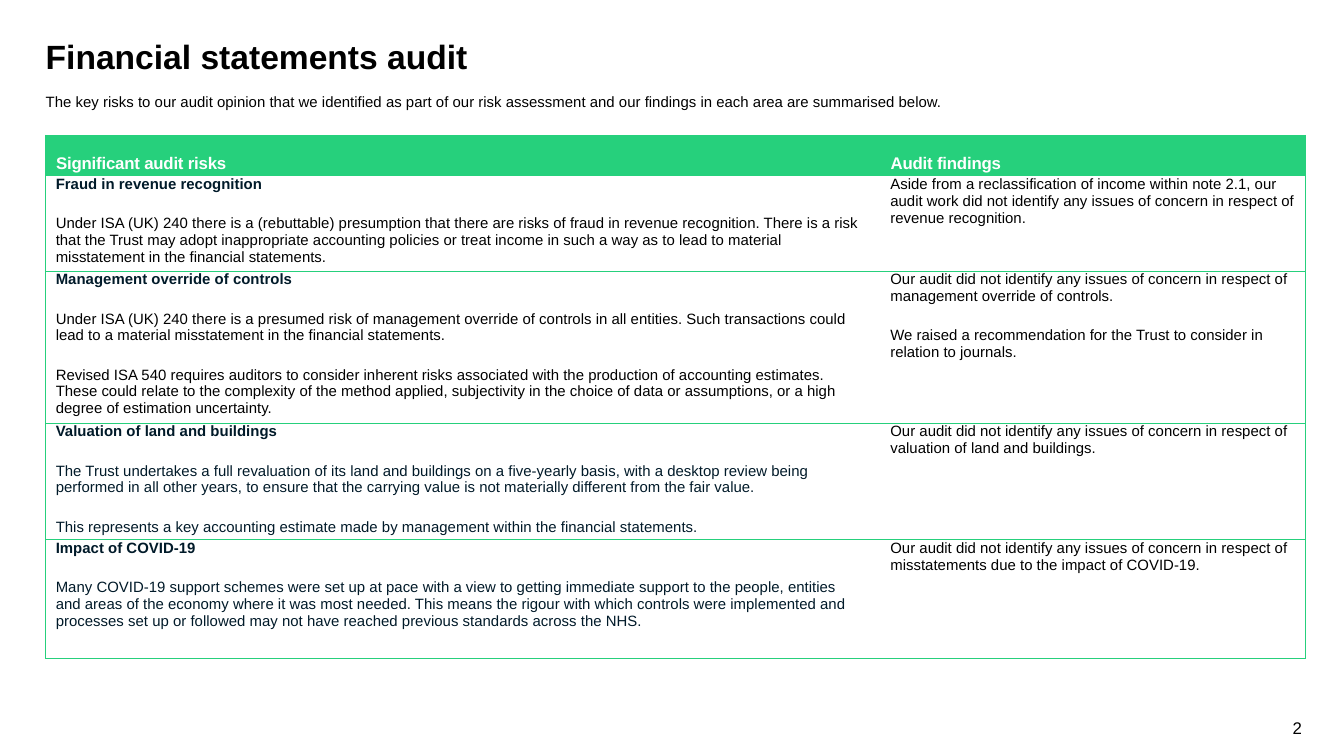
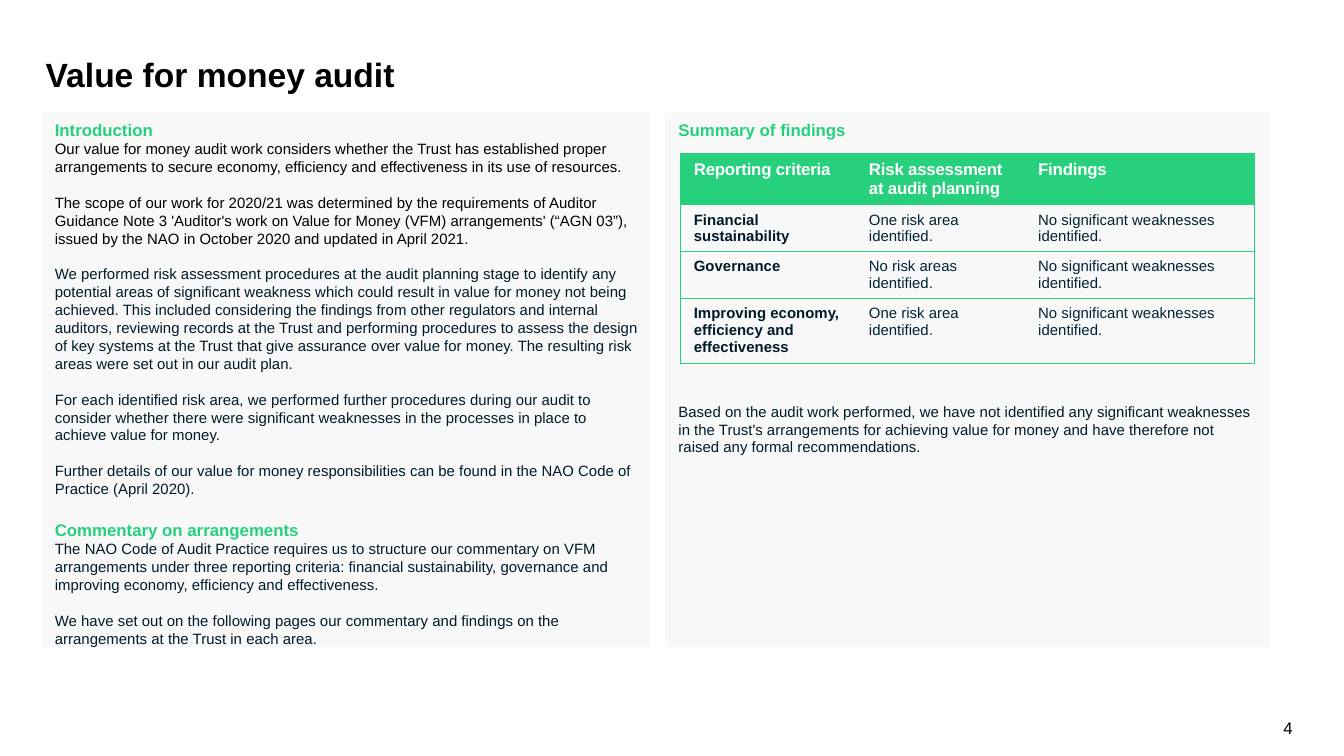
from dataclasses import dataclass

import pptx
import pptx.dml.color
import pptx.enum.shapes
import pptx.enum.text
import pptx.oxml
import pptx.oxml.ns
import pptx.presentation
import pptx.slide
import pptx.table
import pptx.text.text
import pptx.util

Pt = pptx.util.Pt

COLOURS = {
    "green": "26D07C",
    "black": "000000",
    "navy": "001A29",
    "blue": "002337",
    "white": "FFFFFF",
    "panel": "EAEAEA",
}
STYLES = {
    "title": ({"size": Pt(18), "bold": True}, "black"),
    "number": ({"size": Pt(9), "bold": False}, "black"),
    "heading": ({"size": Pt(9), "bold": True}, "green"),
    "header": ({"size": Pt(9), "bold": True}, "white"),
    "label": ({"size": Pt(8), "bold": True}, "navy"),
    "black": ({"size": Pt(8), "bold": False}, "black"),
    "navy": ({"size": Pt(8), "bold": False}, "navy"),
    "blue": ({"size": Pt(8), "bold": False}, "blue"),
}
FONT = "Arial"
HEADER_TRACKING = "-10"
BORDER_WIDTH = Pt(0.5)
LEFT = 24.5
CONTENT_WIDTH = 683.3
PANEL_TOP = 60.5
PANEL_HEIGHT = 286.4
LINE_GAP = 9.6
RISK_GAP = 12


@dataclass(frozen=True)
class Line:
    text: str
    style: str = "black"
    gap: float = 0


@dataclass(frozen=True)
class Box:
    left: float
    top: float
    width: float
    height: float

    def lengths(self) -> tuple:
        return tuple(Pt(value) for value in (self.left, self.top, self.width, self.height))


@dataclass(frozen=True)
class Insets:
    left: float = 7.2
    top: float = 3.6
    right: float = 7.2
    bottom: float = 3.6


@dataclass(frozen=True)
class Grid:
    left: float
    top: float
    columns: tuple[float, ...]
    rows: tuple[float, ...]
    cells: list[list[list[Line]]]
    header_insets: Insets
    body_insets: tuple[Insets, ...]
    header_spacing: float = 1


def set_insets(target, insets: Insets) -> None:
    """Apply insets to a text frame or a table cell."""
    for side in ("left", "top", "right", "bottom"):
        setattr(target, f"margin_{side}", Pt(getattr(insets, side)))


def write_lines(frame: pptx.text.text.TextFrame, lines: list[Line], spacing: float = 1) -> None:
    frame.word_wrap = True
    for index, line in enumerate(lines):
        paragraph = frame.add_paragraph() if index else frame.paragraphs[0]
        paragraph.alignment = pptx.enum.text.PP_ALIGN.LEFT
        paragraph.line_spacing = spacing
        if line.gap:
            paragraph.space_before = Pt(line.gap)
        run = paragraph.add_run()
        run.text = line.text
        values, colour = STYLES[line.style]
        for name, value in {"name": FONT, **values}.items():
            setattr(run.font, name, value)
        run.font.color.rgb = pptx.dml.color.RGBColor.from_string(COLOURS[colour])
        if line.style == "header":
            run._r.get_or_add_rPr().set("spc", HEADER_TRACKING)


def add_text(slide: pptx.slide.Slide, box: Box, line: Line, insets: Insets = Insets()) -> None:
    frame = slide.shapes.add_textbox(*box.lengths()).text_frame
    set_insets(frame, insets)
    write_lines(frame, [line])


def add_panel(slide: pptx.slide.Slide, box: Box, lines: list[Line]) -> None:
    """Add a pale, translucent text panel."""
    shape = slide.shapes.add_shape(pptx.enum.shapes.MSO_SHAPE.RECTANGLE, *box.lengths())
    shape.shadow.inherit = False
    shape.line.fill.background()
    shape.fill.solid()
    shape.fill.fore_color.rgb = pptx.dml.color.RGBColor.from_string(COLOURS["panel"])
    colour = shape.fill._xPr.find(".//" + pptx.oxml.ns.qn("a:srgbClr"))
    colour.append(pptx.oxml.parse_xml(f'<a:alpha {pptx.oxml.ns.nsdecls("a")} val="33000"/>'))
    shape.text_frame.vertical_anchor = pptx.enum.text.MSO_ANCHOR.TOP
    set_insets(shape.text_frame, Insets(right=5.8))
    write_lines(shape.text_frame, lines)


def set_borders(cell: pptx.table._Cell, first: bool, last: bool) -> None:
    """Rule every row, and close the table at its outer sides."""
    properties = cell._tc.get_or_add_tcPr()
    for side, visible in {"L": first, "R": last, "T": True, "B": True}.items():
        fill = f'<a:solidFill><a:srgbClr val="{COLOURS["green"]}"/></a:solidFill>' if visible else "<a:noFill/>"
        properties.append(pptx.oxml.parse_xml(
            f'<a:ln{side} {pptx.oxml.ns.nsdecls("a")} w="{BORDER_WIDTH}">{fill}</a:ln{side}>'
        ))


def add_grid(slide: pptx.slide.Slide, grid: Grid) -> None:
    box = Box(grid.left, grid.top, sum(grid.columns), sum(grid.rows))
    table = slide.shapes.add_table(len(grid.rows), len(grid.columns), *box.lengths()).table
    table.horz_banding = False
    for column, width in zip(table.columns, grid.columns):
        column.width = Pt(width)
    for row, height in zip(table.rows, grid.rows):
        row.height = Pt(height)
    for row_index, row_lines in enumerate(grid.cells):
        is_header = row_index == 0
        for column_index, lines in enumerate(row_lines):
            cell = table.cell(row_index, column_index)
            set_insets(cell, grid.header_insets if is_header else grid.body_insets[column_index])
            set_borders(cell, column_index == 0, column_index == len(row_lines) - 1)
            if is_header:
                cell.fill.solid()
                cell.fill.fore_color.rgb = pptx.dml.color.RGBColor.from_string(COLOURS["green"])
            else:
                cell.fill.background()
            write_lines(cell.text_frame, lines, grid.header_spacing if is_header else 1)


def add_page(
    presentation: pptx.presentation.Presentation, title: str, title_top: float, number: str, number_left: float
) -> pptx.slide.Slide:
    slide = presentation.slides.add_slide(presentation.slide_layouts[6])
    add_text(slide, Box(LEFT, title_top, CONTENT_WIDTH, 45.4), Line(title, "title"), Insets(0, 8.6, 0, 0))
    add_text(slide, Box(number_left, 380.9, 707.8 - number_left, 18), Line(number, "number"))
    return slide


def risk(heading: str, *descriptions: str, style: str = "navy") -> list[Line]:
    return [Line(heading, "label")] + [Line(text, style, RISK_GAP) for text in descriptions]


def criterion(name: str, assessment: str) -> list[list[Line]]:
    return [
        [Line(name, "label")],
        [Line(assessment, "blue")],
        [Line("No significant weaknesses identified.", "blue")],
    ]


def build_financial_statements(presentation: pptx.presentation.Presentation) -> None:
    slide = add_page(presentation, "Financial statements audit", 10.8, "2", 685.4)
    add_text(
        slide, Box(LEFT, 44.6, CONTENT_WIDTH, 14.4),
        Line("The key risks to our audit opinion that we identified as part of our risk assessment and our findings "
             "in each area are summarised below."),
        Insets(0, 5, 0, 0),
    )
    cells = [
        [[Line("Significant audit risks", "header")], [Line("Audit findings", "header")]],
        [
            risk("Fraud in revenue recognition",
                 "Under ISA (UK) 240 there is a (rebuttable) presumption that there are risks of fraud in revenue "
                 "recognition. There is a risk that the Trust may adopt inappropriate accounting policies or treat "
                 "income in such a way as to lead to material misstatement in the financial statements.",
                 style="black"),
            [Line("Aside from a reclassification of income within note 2.1, our audit work did not identify any "
                  "issues of concern in respect of revenue recognition.")],
        ],
        [
            risk("Management override of controls",
                 "Under ISA (UK) 240 there is a presumed risk of management override of controls in all entities. "
                 "Such transactions could lead to a material misstatement in the financial statements.",
                 "Revised ISA 540 requires auditors to consider inherent risks associated with the production of "
                 "accounting estimates. These could relate to the complexity of the method applied, subjectivity in "
                 "the choice of data or assumptions, or a high degree of estimation uncertainty.",
                 style="black"),
            [Line("Our audit did not identify any issues of concern in respect of management override of controls."),
             Line("We raised a recommendation for the Trust to consider in relation to journals.", gap=RISK_GAP)],
        ],
        [
            risk("Valuation of land and buildings",
                 "The Trust undertakes a full revaluation of its land and buildings on a five-yearly basis, with a "
                 "desktop review being performed in all other years, to ensure that the carrying value is not "
                 "materially different from the fair value.",
                 "This represents a key accounting estimate made by management within the financial statements."),
            [Line("Our audit did not identify any issues of concern in respect of valuation of land and buildings.")],
        ],
        [
            risk("Impact of COVID-19",
                 "Many COVID-19 support schemes were set up at pace with a view to getting immediate support to the "
                 "people, entities and areas of the economy where it was most needed. This means the rigour with "
                 "which controls were implemented and processes set up or followed may not have reached previous "
                 "standards across the NHS."),
            [Line("Our audit did not identify any issues of concern in respect of misstatements due to the impact "
                  "of COVID-19.")],
        ],
    ]
    add_grid(slide, Grid(
        LEFT, 72.5, (447.1, 227.9), (21.7, 51.1, 81.4, 62.2, 63.7), cells,
        header_insets=Insets(5.6, 0, 0, 0),
        body_insets=(Insets(5.4, 0, 8, 0), Insets(5.4, 0, 5, 0)),
        header_spacing=2,
    ))


def build_value_for_money(presentation: pptx.presentation.Presentation) -> None:
    slide = add_page(presentation, "Value for money audit", 20.2, "4", 680.4)
    add_panel(slide, Box(22.3, PANEL_TOP, 326.2, PANEL_HEIGHT), [
        Line("Introduction", "heading"),
        Line("Our value for money audit work considers whether the Trust has established proper arrangements to "
             "secure economy, efficiency and effectiveness in its use of resources."),
        Line("The scope of our work for 2020/21 was determined by the requirements of Auditor Guidance Note 3 "
             "'Auditor's work on Value for Money (VFM) arrangements' (“AGN 03”), issued by the NAO in October 2020 "
             "and updated in April 2021.", gap=LINE_GAP),
        Line("We performed risk assessment procedures at the audit planning stage to identify any potential areas "
             "of significant weakness which could result in value for money not being achieved. This included "
             "considering the findings from other regulators and internal auditors, reviewing records at the Trust "
             "and performing procedures to assess the design of key systems at the Trust that give assurance over "
             "value for money. The resulting risk areas were set out in our audit plan.", "navy", LINE_GAP),
        Line("For each identified risk area, we performed further procedures during our audit to consider whether "
             "there were significant weaknesses in the processes in place to achieve value for money.",
             "navy", LINE_GAP),
        Line("Further details of our value for money responsibilities can be found in the NAO Code of Practice "
             "(April 2020).", "navy", LINE_GAP),
        Line("Commentary on arrangements", "heading", 11.8),
        Line("The NAO Code of Audit Practice requires us to structure our commentary on VFM arrangements under three "
             "reporting criteria: financial sustainability, governance and improving economy, efficiency and "
             "effectiveness.", "navy"),
        Line("We have set out on the following pages our commentary and findings on the arrangements at the Trust "
             "in each area.", "navy", LINE_GAP),
    ])
    add_panel(slide, Box(356.4, PANEL_TOP, 324, PANEL_HEIGHT), [
        Line("Summary of findings", "heading"),
        Line("Based on the audit work performed, we have not identified any significant weaknesses in the Trust's "
             "arrangements for achieving value for money and have therefore not raised any formal recommendations.",
             "navy", 140.7),
    ])
    headers = ("Reporting criteria", "Risk assessment at audit planning", "Findings")
    cells = [
        [[Line(header, "header")] for header in headers],
        criterion("Financial sustainability", "One risk area identified."),
        criterion("Governance", "No risk areas identified."),
        criterion("Improving economy, efficiency and effectiveness", "One risk area identified."),
    ]
    insets = Insets(bottom=2)
    add_grid(slide, Grid(
        364.5, 82.1, (93.8, 90.7, 122.8), (27.6, 25.1, 25.1, 34.8), cells,
        header_insets=insets, body_insets=(insets,) * len(headers),
    ))


def main() -> None:
    presentation = pptx.Presentation()
    presentation.slide_width = Pt(720)
    presentation.slide_height = Pt(405)
    build_financial_statements(presentation)
    build_value_for_money(presentation)
    presentation.save("out.pptx")


if __name__ == "__main__":
    main()
